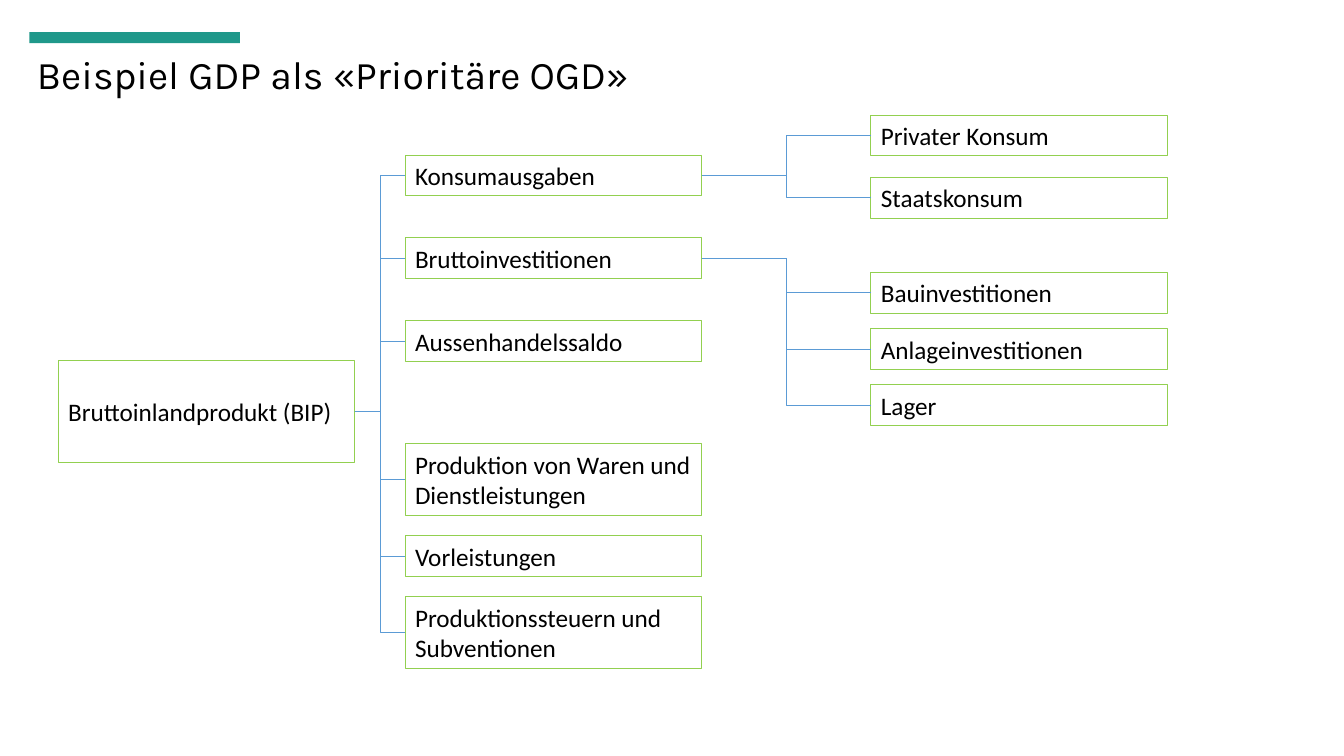
from lxml.etree import SubElement
from pptx import Presentation
from pptx.dml.color import RGBColor
from pptx.enum.shapes import MSO_CONNECTOR, MSO_SHAPE
from pptx.enum.text import MSO_ANCHOR, MSO_AUTO_SIZE, PP_ALIGN
from pptx.oxml.ns import qn
from pptx.util import Cm, Pt

# Content: (text, top in cm, height in cm, children)
TITLE = "Beispiel GDP als «Prioritäre OGD»"
ONE_LINE, TWO_LINES, ROOT_HEIGHT = 1.03, 1.8, 2.57
TREE = ("Bruttoinlandprodukt (BIP)", 9.09, ROOT_HEIGHT, [
    ("Konsumausgaben", 3.91, ONE_LINE, [
        ("Privater Konsum", 2.9, ONE_LINE, []),
        ("Staatskonsum", 4.47, ONE_LINE, []),
    ]),
    ("Bruttoinvestitionen", 5.99, ONE_LINE, [
        ("Bauinvestitionen", 6.86, ONE_LINE, []),
        ("Anlageinvestitionen", 8.28, ONE_LINE, []),
        ("Lager", 9.7, ONE_LINE, []),
    ]),
    ("Aussenhandelssaldo", 8.08, ONE_LINE, []),
    ("Produktion von Waren und Dienstleistungen", 11.18, TWO_LINES, []),
    ("Vorleistungen", 13.5, ONE_LINE, []),
    ("Produktionssteuern und Subventionen", 15.04, TWO_LINES, []),
])
COLUMN_LEFT = [1.47, 10.21, 21.95]
BOX_WIDTH = 7.47
COLORS = {"bar": "1F988A", "box": "92D050", "link": "5B9BD5", "text": "000000"}


def color(name):
    return RGBColor.from_string(COLORS[name])


def format_text(tf, text, font, size, anchor):
    tf.text = text
    tf.word_wrap = True
    tf.auto_size = MSO_AUTO_SIZE.NONE
    tf.vertical_anchor = anchor
    p = tf.paragraphs[0]
    p.alignment = PP_ALIGN.LEFT
    p.font.name, p.font.size = font, Pt(size)
    p.font.color.rgb = color("text")
    return p


def add_rect(s, left, top, width, height):
    sp = s.shapes.add_shape(MSO_SHAPE.RECTANGLE, Cm(left), Cm(top), Cm(width), Cm(height))
    sp.shadow.inherit = False
    return sp


def add_link(s, parent, child):
    link = s.shapes.add_connector(MSO_CONNECTOR.ELBOW, 0, 0, 0, 0)
    link.begin_connect(parent, 3)
    link.end_connect(child, 1)
    link.line.color.rgb = color("link")
    link.line.width = Pt(0.5)
    SubElement(link._element.spPr, qn("a:effectLst"))


def add_branch(s, node, level=0):
    text, top, height, children = node
    sp = add_rect(s, COLUMN_LEFT[level], top, BOX_WIDTH, height)
    sp.fill.background()
    sp.line.color.rgb = color("box")
    sp.line.width = Pt(0.75)
    format_text(sp.text_frame, text, "Calibri", 18, MSO_ANCHOR.MIDDLE)
    for child in children:
        add_link(s, sp, add_branch(s, child, level + 1))
    return sp


prs = Presentation()
prs.slide_width, prs.slide_height = Cm(33.87), Cm(19.05)
s = prs.slides.add_slide(prs.slide_layouts[5])

# Accent bar
bar = add_rect(s, 0.74, 0.81, 5.31, 0.28)
bar.fill.solid()
bar.fill.fore_color.rgb = color("bar")
bar.line.fill.background()

# Title
title = s.shapes.title
title.left, title.top, title.width, title.height = Cm(0.48), Cm(1.02), Cm(32.72), Cm(1.57)
title.text_frame.margin_left = Cm(0.45)
p = format_text(title.text_frame, TITLE, "Karla", 28, MSO_ANCHOR.BOTTOM)
p.line_spacing = 0.9

# Tree of boxes and links
add_branch(s, TREE)

prs.save("out.pptx")
